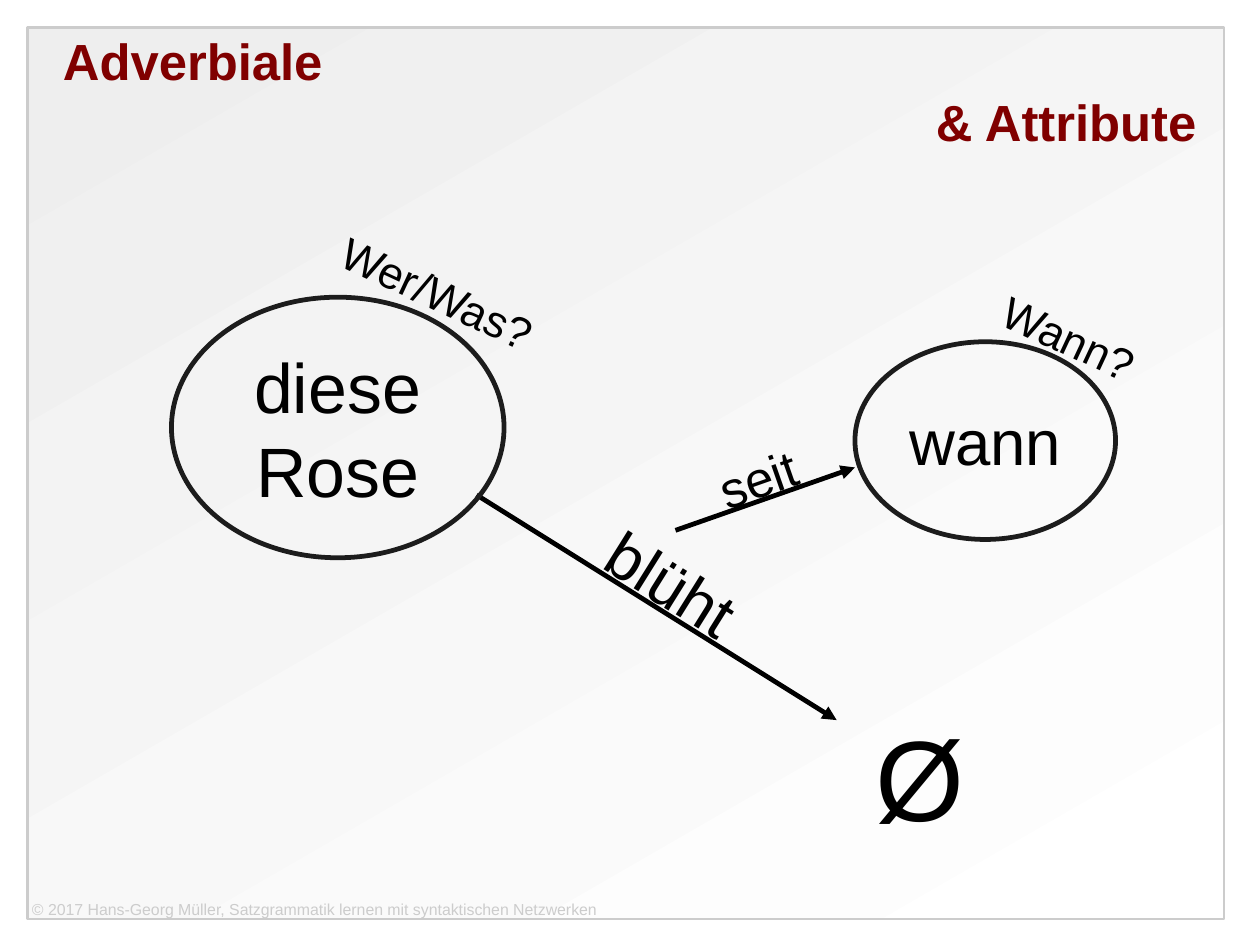
from dataclasses import dataclass

from lxml import etree
from pptx import Presentation
from pptx.dml.color import RGBColor
from pptx.enum.shapes import MSO_CONNECTOR, MSO_SHAPE
from pptx.enum.text import MSO_ANCHOR, PP_ALIGN
from pptx.oxml.ns import qn
from pptx.util import Inches, Pt

LEFT, MID, RIGHT = PP_ALIGN.LEFT, PP_ALIGN.CENTER, PP_ALIGN.RIGHT
TOP, CENTER = MSO_ANCHOR.TOP, MSO_ANCHOR.MIDDLE
RECT, OVAL = MSO_SHAPE.RECTANGLE, MSO_SHAPE.OVAL
LINE = MSO_CONNECTOR.STRAIGHT
WIDE, HIGH = 28 / 2.54, 21 / 2.54

Box = tuple[float, float, float, float]


@dataclass
class Node:
    text: str
    box: Box
    size: int


@dataclass
class Label:
    text: str
    box: Box
    size: int
    turn: float = 0
    align: PP_ALIGN = LEFT
    anchor: MSO_ANCHOR = TOP


@dataclass
class Arrow:
    start: tuple[float, float]
    end: tuple[float, float]


NODES = [
    Node("diese\nRose", (1.5, 2.6, 2.91, 2.28), 44),
    Node("wann", (7.48, 2.99, 2.28, 1.73), 40),
]
ARROWS = [
    Arrow((4.17, 4.33), (7.32, 6.3)),
    Arrow((5.91, 4.64), (7.48, 4.09)),
]
LABELS = [
    Label("Wer/Was?", (2.74, 2.29, 2.15, 0.97), 28, 25),
    Label("Wann?", (8.65, 2.7, 1.55, 0.53), 28, 25),
    Label("blüht", (5.08, 4.75, 1.6, 0.7), 40, 32, MID, CENTER),
    Label("seit", (6.03, 3.88, 1.2, 0.6), 32, -19.3, MID, CENTER),
    Label("Ø", (7.56, 6.14, 2.05, 2), 72),
]


def color(code: str) -> RGBColor:
    return RGBColor.from_string(code)


def write(shape, text: str, *, size: int, tint: str = "000000",
          bold: bool = False, aligns: tuple = (LEFT,),
          anchor: MSO_ANCHOR = TOP, pad: tuple = (0.1, 0.05),
          wrap: bool = True) -> None:
    frame = shape.text_frame
    frame.word_wrap = wrap
    frame.vertical_anchor = anchor
    frame.margin_left = frame.margin_right = Inches(pad[0])
    frame.margin_top = frame.margin_bottom = Inches(pad[1])
    frame.text = text
    for i, para in enumerate(frame.paragraphs):
        para.alignment = aligns[i % len(aligns)]
        font = para.runs[0].font
        font.name, font.size, font.bold = "Arial", Pt(size), bold
        font.color.rgb = color(tint)


def add_box(slide, box: Box):
    return slide.shapes.add_textbox(*map(Inches, box))


def add_form(slide, kind: MSO_SHAPE, box: Box, tint: str, width: float):
    shape = slide.shapes.add_shape(kind, *map(Inches, box))
    shape.shadow.inherit = False
    shape.line.color.rgb = color(tint)
    shape.line.width = Pt(width)
    return shape


def add_frame(slide) -> None:
    fill = add_form(slide, RECT, (0.24, 0.24, 10.47, 7.8), "CCCCCC", 1.5).fill
    fill.gradient()
    fill.gradient_angle = 300
    for stop, code in zip(fill.gradient_stops, ("EEEEEE", "FFFFFF")):
        stop.color.rgb = color(code)


def add_node(slide, node: Node) -> None:
    shape = add_form(slide, OVAL, node.box, "1C1C1C", 3)
    shape.fill.background()
    write(shape, node.text, size=node.size, aligns=(MID,), anchor=CENTER,
          pad=(0.12, 0.07), wrap=False)


def add_label(slide, label: Label) -> None:
    shape = add_box(slide, label.box)
    shape.rotation = label.turn
    write(shape, label.text, size=label.size, aligns=(label.align,),
          anchor=label.anchor)


def add_arrow(slide, arrow: Arrow) -> None:
    ends = map(Inches, arrow.start + arrow.end)
    link = slide.shapes.add_connector(LINE, *ends)
    link.line.color.rgb = color("000000")
    link.line.width = Pt(3)
    props = link.element.spPr
    etree.SubElement(props.find(qn("a:ln")), qn("a:tailEnd"), type="triangle")
    etree.SubElement(props, qn("a:effectLst"))


def main() -> None:
    deck = Presentation()
    deck.slide_width, deck.slide_height = Inches(WIDE), Inches(HIGH)
    slide = deck.slides.add_slide(deck.slide_layouts[6])
    add_frame(slide)
    write(add_box(slide, (0.24, 7.87, 10.47, 0.16)),
          "© 2017 Hans-Georg Müller, Satzgrammatik lernen mit "
          "syntaktischen Netzwerken",
          size=10, tint="CCCCCC", pad=(0.04, 0))
    write(add_box(slide, (0.55, 0.29, 9.92, 1)), "Adverbiale\n& Attribute",
          size=32, tint="800000", bold=True, aligns=(LEFT, RIGHT),
          anchor=CENTER, pad=(0, 0))
    for arrow in ARROWS:
        add_arrow(slide, arrow)
    for node in NODES:
        add_node(slide, node)
    for label in LABELS:
        add_label(slide, label)
    deck.save("out.pptx")


if __name__ == "__main__":
    main()
